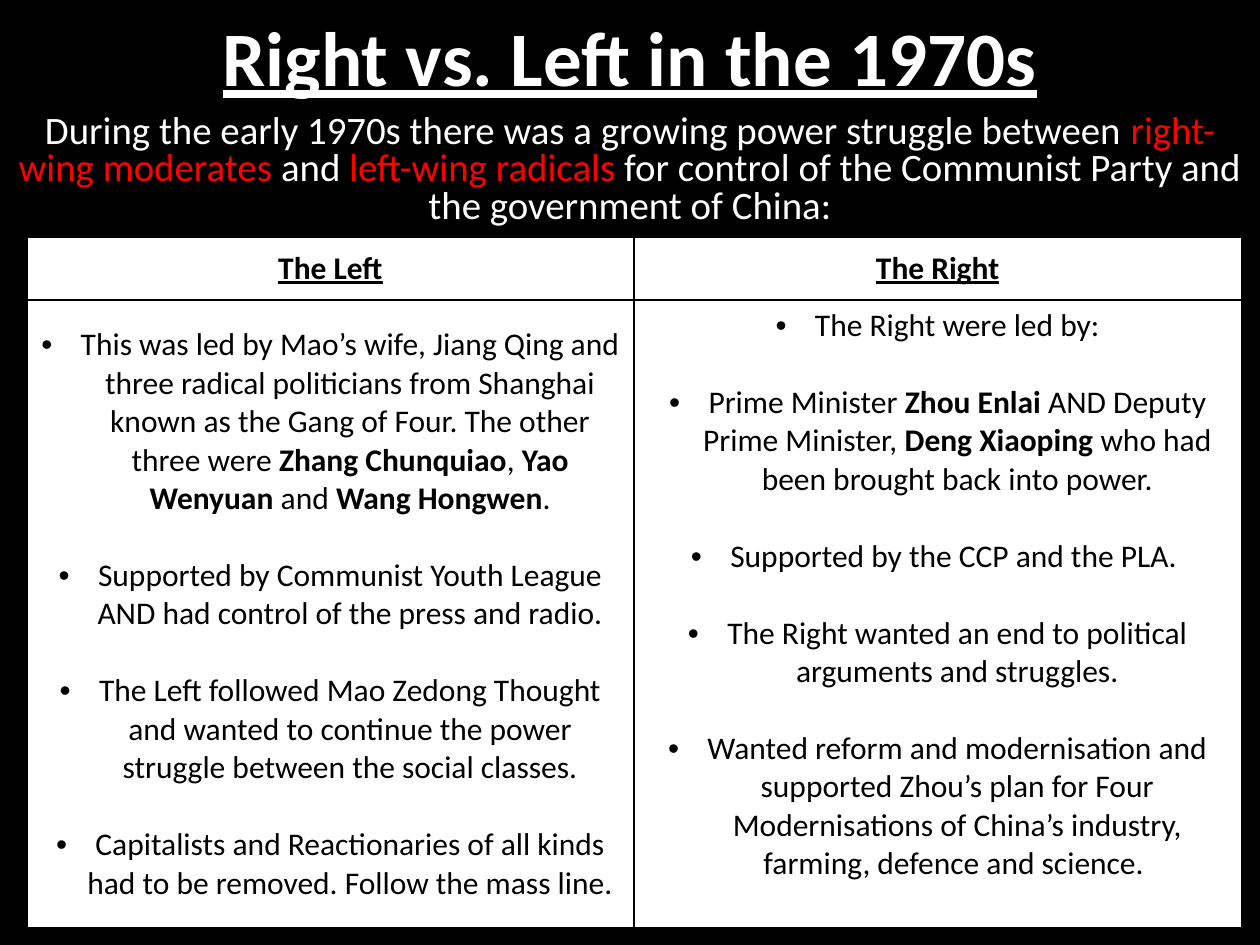
from dataclasses import dataclass

from lxml.etree import SubElement
from pptx import Presentation
from pptx.dml.color import RGBColor
from pptx.enum.text import MSO_ANCHOR, PP_ALIGN
from pptx.oxml.ns import qn
from pptx.util import Pt

FONT = "Calibri"
BLACK, WHITE, RED = "000000", "FFFFFF", "FF0000"
LINE_GAP = 22
BULLET_INDENT = 22.5


@dataclass(frozen=True)
class Span:
    text: str
    color: str = BLACK
    bold: bool = False
    underline: bool = False


@dataclass(frozen=True)
class Side:
    heading: str
    points: list[list[Span]]
    bottom_margin: float


@dataclass(frozen=True)
class TextBlock:
    left: float
    top: float
    width: float
    height: float
    size: float
    spacing: float
    anchor: MSO_ANCHOR
    spans: list[Span]


def rgb(code: str) -> RGBColor:
    return RGBColor.from_string(code)


def plain(text: str) -> Span:
    return Span(text)


def strong(text: str) -> Span:
    return Span(text, bold=True)


def write_spans(para, spans: list[Span], size: float) -> None:
    para.alignment = PP_ALIGN.CENTER
    for span in spans:
        run = para.add_run()
        run.text = span.text
        run.font.name = FONT
        run.font.size = Pt(size)
        run.font.bold = span.bold
        run.font.underline = span.underline
        run.font.color.rgb = rgb(span.color)


def add_bullet(para) -> None:
    properties = para._p.get_or_add_pPr()
    properties.set("marL", str(Pt(BULLET_INDENT)))
    properties.set("indent", str(-Pt(BULLET_INDENT)))
    SubElement(properties, qn("a:buFont"), typeface="Arial")
    SubElement(properties, qn("a:buChar"), char="•")


def style_cell(cell) -> None:
    cell.vertical_anchor = MSO_ANCHOR.MIDDLE
    properties = cell._tc.get_or_add_tcPr()
    for edge in ("lnL", "lnR", "lnT", "lnB"):
        line = SubElement(properties, qn(f"a:{edge}"), w=str(Pt(1)))
        fill = SubElement(line, qn("a:solidFill"))
        SubElement(fill, qn("a:srgbClr"), val=BLACK)
    cell.fill.solid()
    cell.fill.fore_color.rgb = rgb(WHITE)


def add_text_block(page, block: TextBlock) -> None:
    box = page.shapes.add_textbox(
        Pt(block.left), Pt(block.top), Pt(block.width), Pt(block.height)
    )
    frame = box.text_frame
    frame.word_wrap = True
    frame.vertical_anchor = block.anchor
    para = frame.paragraphs[0]
    para.line_spacing = block.spacing
    write_spans(para, block.spans, block.size)


def add_comparison(page, sides: list[Side]) -> None:
    column_width, row_heights = 347, (36, 359)
    table = page.shapes.add_table(
        len(row_heights), len(sides), Pt(15.3), Pt(135.4),
        Pt(column_width * len(sides)), Pt(sum(row_heights)),
    ).table
    for row, height in zip(table.rows, row_heights):
        row.height = Pt(height)
    for index, side in enumerate(sides):
        table.columns[index].width = Pt(column_width)
        heading, body = table.cell(0, index), table.cell(1, index)
        style_cell(heading)
        style_cell(body)
        body.margin_bottom = Pt(side.bottom_margin)
        title = Span(side.heading, bold=True, underline=True)
        write_spans(heading.text_frame.paragraphs[0], [title], 18)
        frame = body.text_frame
        for number, spans in enumerate(side.points):
            para = frame.add_paragraph() if number else frame.paragraphs[0]
            if number:
                para.space_before = Pt(LINE_GAP)
            write_spans(para, spans, 18)
            add_bullet(para)


TITLE = TextBlock(
    0, 0, 720, 70, 44, 0.9, MSO_ANCHOR.MIDDLE,
    [Span("Right vs. Left in the 1970s", WHITE, True, True)],
)
INTRODUCTION = TextBlock(
    0, 62, 720, 73, 22.2, 0.8, MSO_ANCHOR.TOP,
    [
        Span("During the early 1970s there was a growing power struggle between ", WHITE),
        Span("right-wing moderates ", RED),
        Span("and ", WHITE),
        Span("left-wing radicals ", RED),
        Span("for control of the Communist Party and the government of China:", WHITE),
    ],
)
SIDES = [
    Side("The Left", [
        [
            plain("This was led by Mao’s wife, Jiang Qing and three radical politicians "
                  "from Shanghai known as the Gang of Four. The other three were "),
            strong("Zhang Chunquiao"), plain(", "), strong("Yao Wenyuan"),
            plain(" and "), strong("Wang Hongwen"), plain("."),
        ],
        [plain("Supported by Communist Youth League AND had control of the press and radio.")],
        [plain("The Left followed Mao Zedong Thought and wanted to continue the power "
               "struggle between the social classes.")],
        [plain("Capitalists and Reactionaries of all kinds had to be removed. "
               "Follow the mass line.")],
    ], 3.6),
    Side("The Right", [
        [plain("The Right were led by:")],
        [
            plain("Prime Minister "), strong("Zhou Enlai "),
            plain("AND Deputy Prime Minister, "), strong("Deng Xiaoping "),
            plain("who had been brought back into power."),
        ],
        [plain("Supported by the CCP and the PLA. ")],
        [plain("The Right wanted an end to political arguments and struggles.")],
        [plain("Wanted reform and modernisation and supported Zhou’s plan for Four "
               "Modernisations of China’s industry, farming, defence and science. ")],
    ], 3.6 + LINE_GAP),
]


def main() -> None:
    deck = Presentation()
    deck.slide_width, deck.slide_height = Pt(720), Pt(540)
    page = deck.slides.add_slide(deck.slide_layouts[6])
    page.background.fill.solid()
    page.background.fill.fore_color.rgb = rgb(BLACK)
    add_text_block(page, TITLE)
    add_text_block(page, INTRODUCTION)
    add_comparison(page, SIDES)
    deck.save("out.pptx")


if __name__ == "__main__":
    main()
